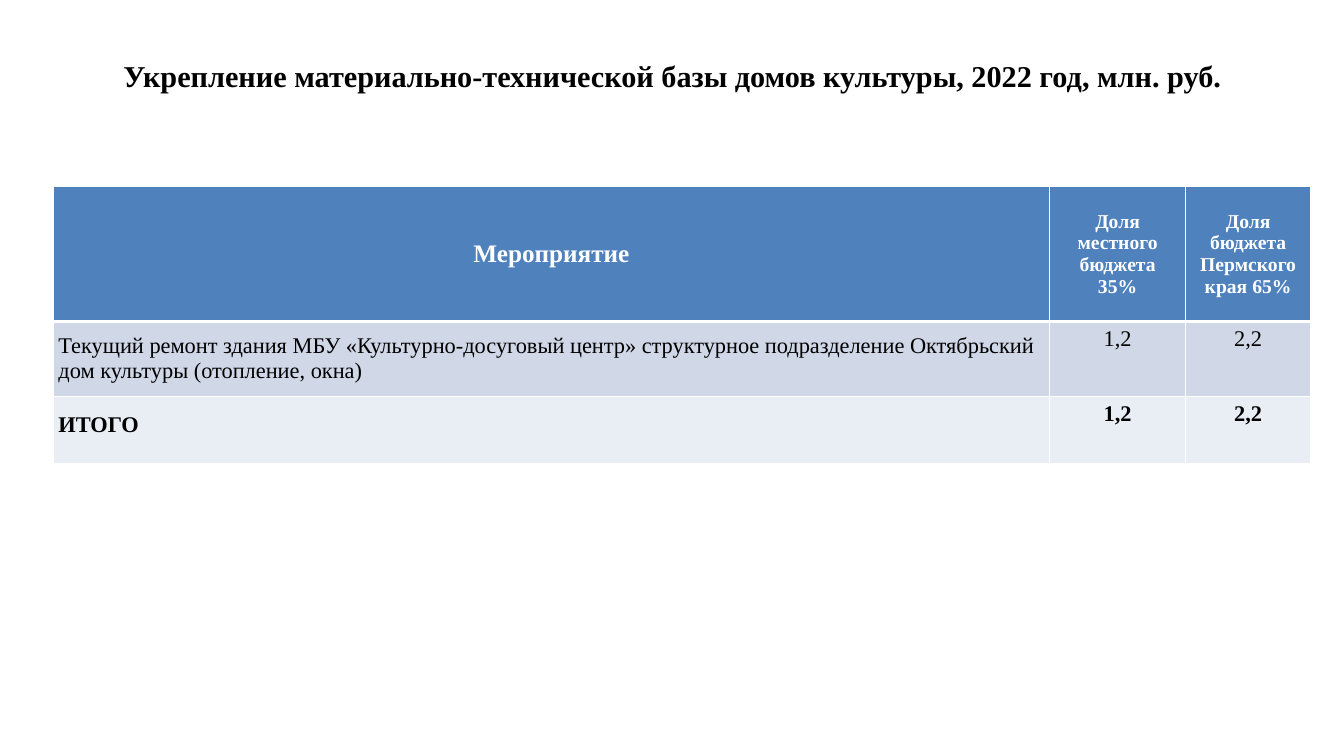
from lxml import etree
from pptx import Presentation
from pptx import util as u
from pptx.dml import color
from pptx.enum import text
from pptx.oxml import ns

PX = 9144  # EMU per px, 100 px to the inch
FONT = "Times New Roman"
WHITE, BLACK, BLUE = "FFFFFF", "000000", "4F81BD"
ROW_FILLS = [BLUE, "D0D8E8", "E9EDF4"]
COLUMNS = [988, 135, 124]
ROWS = [134, 74, 67]
CONTENT = [
    ["Мероприятие", "Доля местного бюджета 35%", "Доля бюджета Пермского края 65%"],
    ["Текущий ремонт здания МБУ «Культурно-досуговый центр» структурное "
     "подразделение Октябрьский дом культуры (отопление, окна)", "1,2", "2,2"],
    ["ИТОГО", "1,2", "2,2"],
]


def px(length):
    return u.Emu(length * PX)


def rgb(value):
    return color.RGBColor.from_string(value)


def apply(target, **values):
    for name, value in values.items():
        setattr(target, name, value)


def write(frame, words, size, ink, bold, align):
    para = frame.paragraphs[0]
    para.alignment = align
    span = para.add_run()
    span.text = words
    apply(span.font, name=FONT, size=u.Pt(size), bold=bold)
    span.font.color.rgb = rgb(ink)
    return para


def add_borders(cell, widths):
    """Draw white lines; they must come before the fill in the cell."""
    properties = cell._tc.get_or_add_tcPr()
    for index, (side, width) in enumerate(widths.items()):
        line = etree.Element(ns.qn(f"a:ln{side}"), w=str(u.Pt(width)))
        fill = etree.SubElement(line, ns.qn("a:solidFill"))
        etree.SubElement(fill, ns.qn("a:srgbClr"), val=WHITE)
        properties.insert(index, line)


def add_title(page, left, top, width, height):
    title = page.shapes.title
    apply(title, left=px(left), top=px(top), width=px(width), height=px(height))
    apply(title.text_frame, word_wrap=True, vertical_anchor=text.MSO_ANCHOR.MIDDLE)
    write(title.text_frame, "Укрепление материально-технической базы домов культуры, "
          "2022 год, млн. руб.", 21.6, BLACK, True, text.PP_ALIGN.CENTER)


def add_budget_table(page, left, top):
    table = page.shapes.add_table(len(ROWS), len(COLUMNS), px(left), px(top),
                                  px(sum(COLUMNS)), px(sum(ROWS))).table
    for column, width in zip(table.columns, COLUMNS):
        column.width = px(width)
    for row, height in zip(table.rows, ROWS):
        row.height = px(height)

    for r, line in enumerate(CONTENT):
        for c, words in enumerate(line):
            cell = table.cell(r, c)
            header, label = r == 0, c == 0
            cell.fill.solid()
            cell.fill.fore_color.rgb = rgb(ROW_FILLS[r])
            # A thick line parts the header from the body
            add_borders(cell, {"L": 1, "R": 1, "T": 3 if r == 1 else 1, "B": 3 if header else 1})
            if header or label:
                cell.vertical_anchor = text.MSO_ANCHOR.MIDDLE
            if label and not header:
                apply(cell, margin_left=px(5), margin_right=px(5), margin_top=0, margin_bottom=0)
            size = (18 if label else 14) if header else 16
            align = text.PP_ALIGN.LEFT if label and not header else text.PP_ALIGN.CENTER
            write(cell.text_frame, words, size, WHITE if header else BLACK, r != 1, align)
    # The total label has tight line spacing
    table.cell(len(ROWS) - 1, 0).text_frame.paragraphs[0].line_spacing = u.Pt(11)


def main():
    deck = Presentation()
    apply(deck, slide_width=px(1333), slide_height=px(750))
    page = deck.slides.add_slide(deck.slide_layouts[5])
    add_title(page, 67, 45, 1200, 60)
    add_budget_table(page, 53, 185)
    deck.save("out.pptx")


if __name__ == "__main__":
    main()
